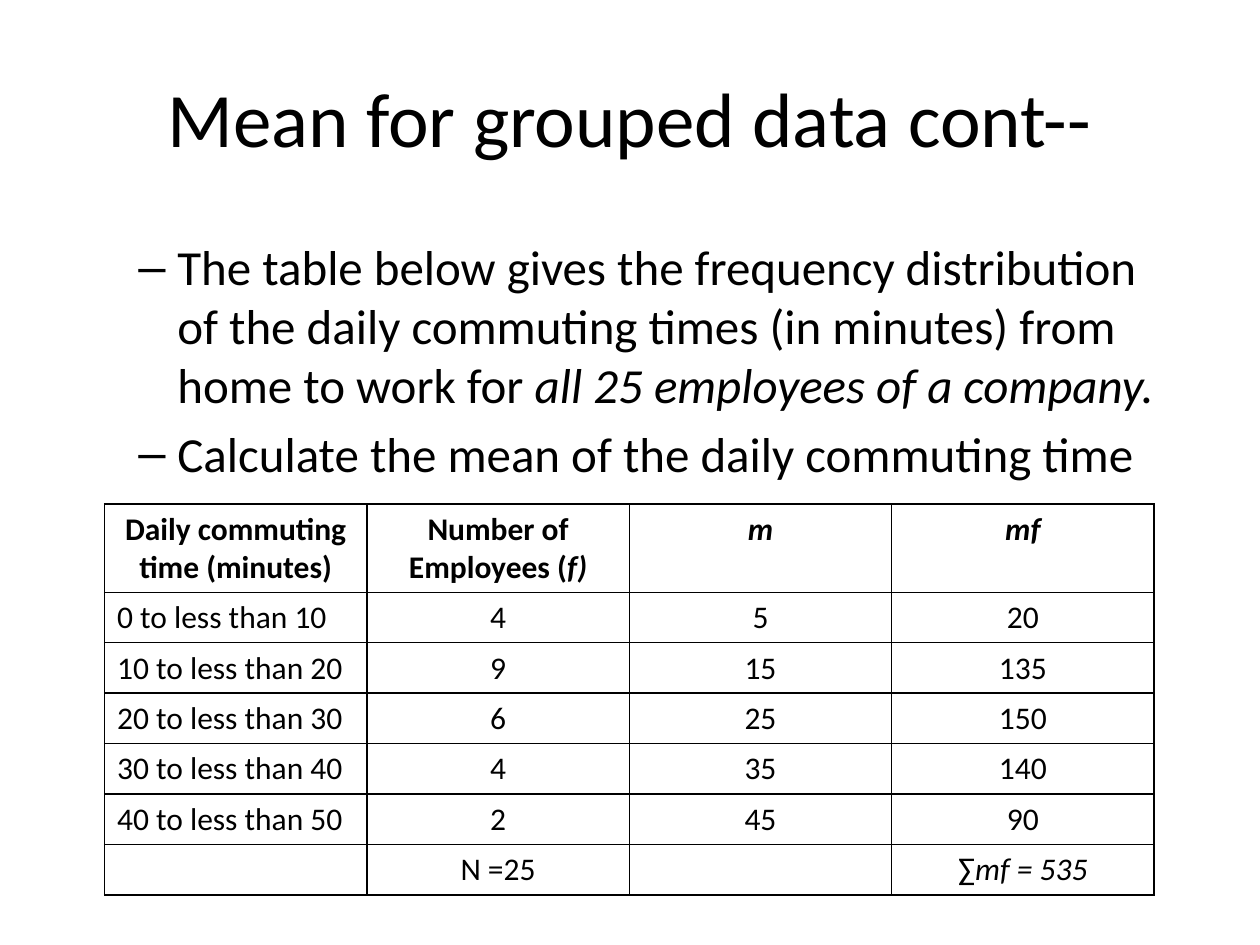
from dataclasses import dataclass

from lxml.etree import SubElement
from pptx import Presentation
from pptx.dml.color import RGBColor
from pptx.enum.text import MSO_ANCHOR, PP_ALIGN as Align
from pptx.oxml.ns import qn
from pptx.util import Inches, Pt

FONT = "Calibri"
BLACK = "000000"
TITLE_ONLY = 5


@dataclass(frozen=True)
class Span:
    text: str
    italic: bool = False


HEADINGS = [
    [Span("Daily commuting time (minutes)")],
    [Span("Number of Employees ("), Span("f)", True)],
    [Span("m", True)],
    [Span("mf", True)],
]
FREQUENCIES = [
    ("0 to less than 10", "4", "5", "20"),
    ("10 to less than 20", "9", "15", "135"),
    ("20 to less than 30", "6", "25", "150"),
    ("30 to less than 40", "4", "35", "140"),
    ("40 to less than 50", "2", "45", "90"),
]
TOTALS = [[], [Span("N =25")], [], [Span("∑"), Span("mf = 535", True)]]
BODY = [
    [
        Span("The table below gives the frequency distribution of the daily "
             "commuting times (in minutes) from home to work for "),
        Span("all 25 employees of a company.", True),
    ],
    [Span("Calculate the mean of the daily commuting time")],
]


def color(value: str) -> RGBColor:
    return RGBColor.from_string(value)


def write(para, spans: list[Span], size: float, bold: bool = False) -> None:
    for span in spans:
        run = para.add_run()
        run.text = span.text
        font = run.font
        font.name, font.size = FONT, Pt(size)
        font.bold, font.italic = bold, span.italic
        font.color.rgb = color(BLACK)


def add_dash(para) -> None:
    properties = para._p.get_or_add_pPr()
    properties.set("marL", str(Inches(0.81)))
    properties.set("indent", str(Inches(-0.31)))
    SubElement(properties, qn("a:buFont"), typeface="Arial")
    SubElement(properties, qn("a:buChar"), char="–")


def add_borders(cell) -> None:
    properties = cell._tc.get_or_add_tcPr()
    for side in ("a:lnL", "a:lnR", "a:lnT", "a:lnB"):
        line = SubElement(properties, qn(side), w=str(Pt(1)))
        fill = SubElement(line, qn("a:solidFill"))
        SubElement(fill, qn("a:srgbClr"), val=BLACK)


def add_title(slide, text: str) -> None:
    title = slide.shapes.title
    title.left, title.top = Inches(0.5), Inches(0.3)
    title.width, title.height = Inches(9), Inches(1.25)
    title.text_frame.vertical_anchor = MSO_ANCHOR.MIDDLE
    para = title.text_frame.paragraphs[0]
    para.alignment = Align.CENTER
    write(para, [Span(text)], 44)


def add_body(slide, items: list[list[Span]]) -> None:
    box = slide.shapes.add_textbox(Inches(0.5), Inches(1.83), Inches(9), Inches(4.95))
    frame = box.text_frame
    frame.word_wrap = True
    for index, spans in enumerate(items):
        para = frame.add_paragraph() if index else frame.paragraphs[0]
        para.level = 1
        para.space_before = Pt(5.6)
        add_dash(para)
        write(para, spans, 28)


def add_frequency_table(slide, rows: list[list[list[Span]]]) -> None:
    height = Inches(3.1)
    holder = slide.shapes.add_table(
        len(rows), len(HEADINGS), Inches(0.83), Inches(4), Inches(8.33), height
    )
    table = holder.table
    table.first_row = table.horz_banding = False
    for row_index, row in enumerate(rows):
        table.rows[row_index].height = Inches(0.32)
        for column_index, spans in enumerate(row):
            cell = table.cell(row_index, column_index)
            add_borders(cell)
            cell.fill.background()
            para = cell.text_frame.paragraphs[0]
            is_label = column_index == 0 and row_index > 0
            para.alignment = Align.LEFT if is_label else Align.CENTER
            write(para, spans, 18, bold=row_index == 0)
    holder.height = height


def main() -> None:
    deck = Presentation()
    deck.slide_width, deck.slide_height = Inches(10), Inches(7.5)
    page = deck.slides.add_slide(deck.slide_layouts[TITLE_ONLY])
    add_title(page, "Mean for grouped data cont--")
    add_body(page, BODY)
    classes = [[[Span(text)] for text in row] for row in FREQUENCIES]
    add_frequency_table(page, [HEADINGS, *classes, TOTALS])
    deck.save("out.pptx")


if __name__ == "__main__":
    main()
